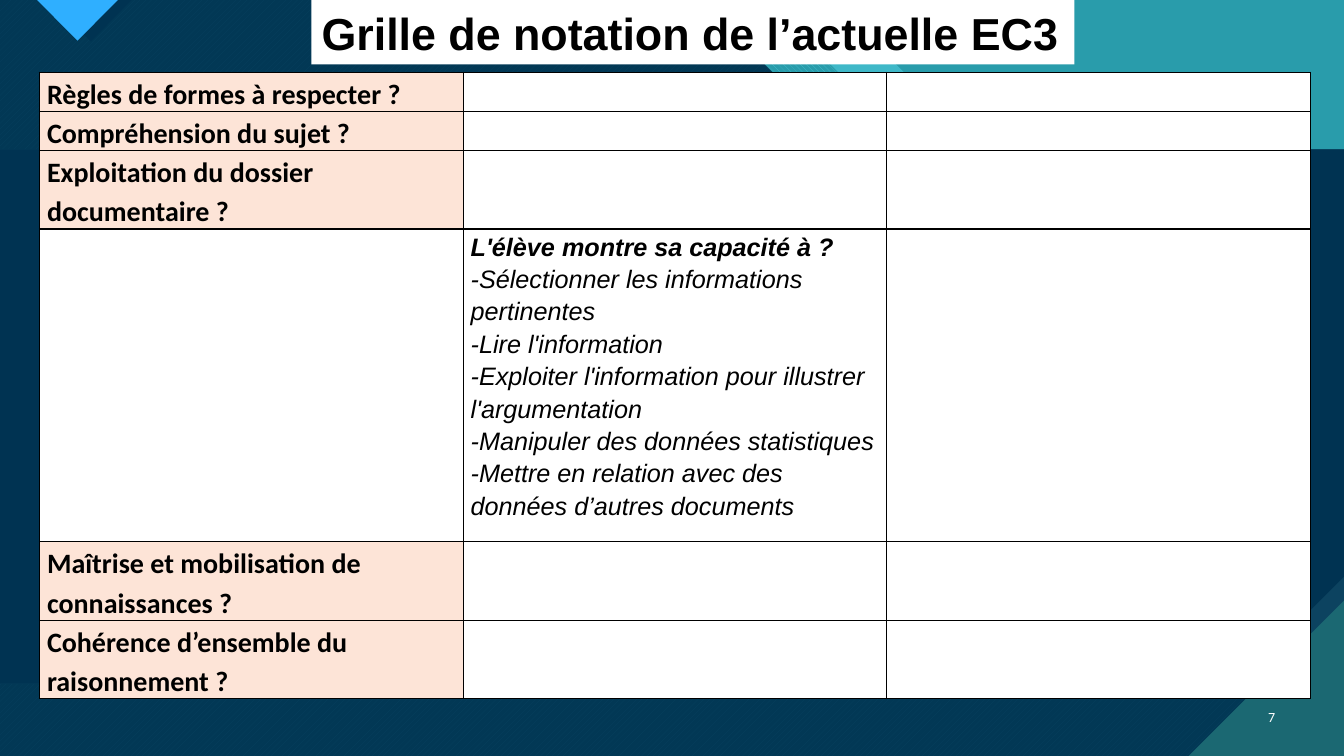
from lxml import etree
from pptx import Presentation
from pptx.dml.color import RGBColor
from pptx.enum.dml import MSO_PATTERN as Pattern
from pptx.enum.shapes import MSO_SHAPE as Shape
from pptx.enum.text import MSO_ANCHOR as Anchor, PP_ALIGN as Align
from pptx.oxml.ns import qn
from pptx.util import Pt

WIDTH, HEIGHT = 960, 540
STEP = 214
COLORS = {
    "aqua": "47C3D3", "teal": "299CAB", "deep_teal": "1B6872",
    "navy": "003352", "band_edge": "0C4360", "sky": "2FAFFF",
    "peach": "FDE4D7", "white": "FFFFFF", "black": "000000",
}
CRITERIA = {
    0: "Règles de formes à respecter ?",
    1: "Compréhension du sujet ?",
    2: "Exploitation du dossier documentaire ?",
    4: "Maîtrise et mobilisation de connaissances ?",
    5: "Cohérence d’ensemble du raisonnement ?",
}
SKILLS_HEADING = "L'élève montre sa capacité à ?"
SKILLS = [
    "-Sélectionner les informations pertinentes",
    "-Lire l'information",
    "-Exploiter l'information pour illustrer l'argumentation",
    "-Manipuler des données statistiques",
    "-Mettre en relation avec des données d’autres documents",
]
SKILLS_ROW = 3
ROW_HEIGHTS = [28, 28, 56, 208, 56, 56]
COLUMN_WIDTH = 302.6


def rgb(name):
    return RGBColor.from_string(COLORS[name])


def stepped_panel(left, top_edge, ledge_end):
    """Outline whose right side descends at 45 degrees, runs level, then descends again."""
    return [(left, 0), (top_edge, 0), (top_edge + STEP, STEP), (ledge_end, STEP),
            (WIDTH, STEP + WIDTH - ledge_end), (WIDTH, HEIGHT), (left, HEIGHT)]


class SlideBuilder:
    def __init__(self, prs):
        title_only = prs.slide_layouts[5]
        self.slide = prs.slides.add_slide(title_only)
        self.shapes = self.slide.shapes

    def background(self, color):
        fill = self.slide.background.fill
        fill.solid()
        fill.fore_color.rgb = rgb(color)

    def paint(self, shape, color, alpha=None, pattern=None, back=None):
        shape.shadow.inherit = False
        shape.line.fill.background()
        fill = shape.fill
        if pattern is None:
            fill.solid()
        else:
            fill.patterned()
            fill.pattern = pattern
            fill.back_color.rgb = rgb(back)
        fill.fore_color.rgb = rgb(color)
        if alpha is not None:
            tint = next(shape._element.spPr.iter(qn("a:srgbClr")))
            etree.SubElement(tint, qn("a:alpha")).set("val", str(alpha * 1000))

    def polygon(self, points, color, **style):
        corners = [(Pt(x), Pt(y)) for x, y in points]
        outline = self.shapes.build_freeform(*corners[0])
        outline.add_line_segments(corners[1:], close=True)
        self.paint(outline.convert_to_shape(), color, **style)

    def rectangle(self, x, y, width, height, color):
        box = self.shapes.add_shape(Shape.RECTANGLE, Pt(x), Pt(y), Pt(width), Pt(height))
        self.paint(box, color)

    def band(self, y, height, color, snip):
        """Full-width band with its lower right corner cut off."""
        band = self.shapes.add_shape(Shape.SNIP_1_RECTANGLE, 0, Pt(y), Pt(WIDTH), Pt(height))
        band.adjustments[0] = snip
        band._element.spPr.get_or_add_xfrm().set("flipV", "1")
        self.paint(band, color)

    def run(self, paragraph, text, size, font, color="black", bold=False, italic=False):
        run = paragraph.add_run()
        run.text = text
        run.font.size, run.font.name = Pt(size), font
        run.font.bold, run.font.italic = bold, italic
        run.font.color.rgb = rgb(color)

    def title(self, text, x, y, width, height):
        title = self.shapes.title
        title.left, title.top, title.width, title.height = Pt(x), Pt(y), Pt(width), Pt(height)
        self.paint(title, "white")
        frame = title.text_frame
        frame.word_wrap = False
        frame.vertical_anchor = Anchor.MIDDLE
        frame.paragraphs[0].alignment = Align.LEFT
        self.run(frame.paragraphs[0], text, 32, "Arial", bold=True)
        self.shapes._spTree.append(title._element)  # bring in front of the table

    def page_number(self, text, x, y, width, height):
        frame = self.shapes.add_textbox(Pt(x), Pt(y), Pt(width), Pt(height)).text_frame
        frame.word_wrap = True
        frame.vertical_anchor = Anchor.MIDDLE
        frame.paragraphs[0].alignment = Align.RIGHT
        self.run(frame.paragraphs[0], text, 10, "Calibri", "white")

    def table(self, x, y, columns, column_width, row_heights):
        grid = self.shapes.add_table(
            len(row_heights), columns, Pt(x), Pt(y),
            Pt(columns * column_width), Pt(sum(row_heights))).table
        grid.first_row = grid.horz_banding = False
        for column in grid.columns:
            column.width = Pt(column_width)
        for row, height in zip(grid.rows, row_heights):
            row.height = Pt(height)
        for cell in grid.iter_cells():
            cell.margin_left = cell.margin_right = Pt(5.4)
            cell.margin_top = cell.margin_bottom = 0
            self.fill_cell(cell, "white")
            self.border_cell(cell)
        return grid

    def fill_cell(self, cell, color):
        cell.fill.solid()
        cell.fill.fore_color.rgb = rgb(color)

    def border_cell(self, cell):
        properties = cell._tc.get_or_add_tcPr()
        for position, side in enumerate(("lnL", "lnR", "lnT", "lnB")):
            line = etree.Element(qn(f"a:{side}"), w=str(Pt(1)))
            fill = etree.SubElement(line, qn("a:solidFill"))
            etree.SubElement(fill, qn("a:srgbClr"), val=COLORS["black"])
            properties.insert(position, line)

    def cell_line(self, cell, text, size, font, first=True, **style):
        frame = cell.text_frame
        paragraph = frame.paragraphs[0] if first else frame.add_paragraph()
        paragraph.line_spacing = 1.15
        self.run(paragraph, text, size, font, **style)


def draw_backdrop(builder):
    builder.background("aqua")
    builder.rectangle(0, 0, WIDTH, HEIGHT, "teal")
    builder.polygon(stepped_panel(0, 594, 889), "aqua", alpha=74)
    builder.polygon(stepped_panel(47.5, 547, 852), "aqua",
                    pattern=Pattern.WIDE_DOWNWARD_DIAGONAL, back="teal")
    front_panel = stepped_panel(0, 500, 805)
    builder.polygon(front_panel, "aqua", pattern=Pattern.WIDE_UPWARD_DIAGONAL, back="deep_teal")
    builder.polygon(front_panel, "navy", alpha=90)
    builder.polygon([(94, 0), (65, 29.5), (34.5, 0)], "navy")
    builder.polygon([(26.5, 0), (55.4, 29), (84.2, 0)], "sky")
    builder.band(106.7, 381.6, "band_edge", 0)
    builder.band(106.7, 381.6, "navy", 0.2)
    builder.polygon([(849, HEIGHT), (WIDTH, HEIGHT), (WIDTH, 429)], "deep_teal")


def draw_grading_grid(builder):
    grid = builder.table(28.2, 51.6, 3, COLUMN_WIDTH, ROW_HEIGHTS)
    for row, criterion in CRITERIA.items():
        cell = grid.cell(row, 0)
        builder.fill_cell(cell, "peach")
        builder.cell_line(cell, criterion, 20, "Calibri", bold=True)
    skills_cell = grid.cell(SKILLS_ROW, 1)
    builder.cell_line(skills_cell, SKILLS_HEADING, 18, "Arial", bold=True, italic=True)
    for skill in SKILLS:
        builder.cell_line(skills_cell, skill, 18, "Arial", first=False, italic=True)


def main():
    prs = Presentation()
    prs.slide_width, prs.slide_height = Pt(WIDTH), Pt(HEIGHT)
    builder = SlideBuilder(prs)
    draw_backdrop(builder)
    builder.page_number("7", 886.3, 497.5, 31.7, 28.8)
    draw_grading_grid(builder)
    builder.title("Grille de notation de l’actuelle EC3", 222.5, 0, 545, 46)
    prs.save("out.pptx")


if __name__ == "__main__":
    main()
